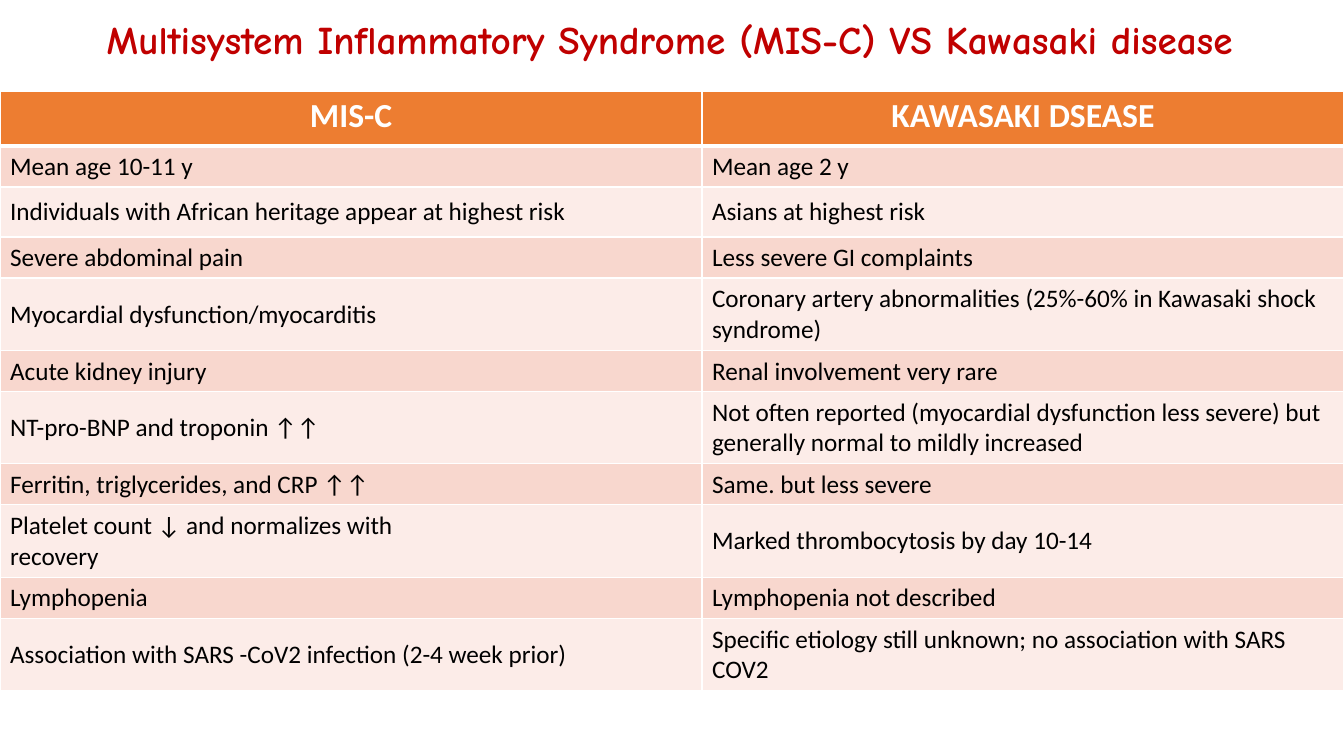
from dataclasses import dataclass

from lxml.etree import SubElement
from pptx import Presentation
from pptx.dml.color import RGBColor
from pptx.enum.text import MSO_ANCHOR as Anchor, PP_ALIGN as Align
from pptx.oxml.ns import qn
from pptx.util import Emu, Pt

PX = 914400 / 100.8


@dataclass(frozen=True)
class Theme:
    title_font: str = "Comic Neue"
    body_font: str = "Calibri"
    title_size: int = 28
    header_size: int = 24
    body_size: int = 18
    title: str = "C00000"
    header: str = "ED7D31"
    bands: tuple = ("F8D7CE", "FCECE8")
    white: str = "FFFFFF"
    black: str = "000000"


theme = Theme()


def px(length):
    return Emu(round(length * PX))


def write(frame, text, font=theme.body_font, size=theme.body_size,
          color=theme.black, bold=False, align=Align.LEFT):
    """Fill a text frame, one paragraph for each line of text."""
    frame.word_wrap = True
    frame.text = text
    for para in frame.paragraphs:
        para.alignment = align
        for span in para.runs:
            span.font.name = font
            span.font.size = Pt(size)
            span.font.bold = bold
            span.font.color.rgb = RGBColor.from_string(color)


HEADER_HEIGHT = 55
COLUMN_WIDTHS = (702, 642)
ROWS = [
    (HEADER_HEIGHT, "MIS-C", "KAWASAKI DSEASE"),
    (41, "Mean age 10-11 y", "Mean age 2 y"),
    (50, "Individuals with African heritage appear at highest risk",
     "Asians at highest risk"),
    (41, "Severe abdominal pain", "Less severe GI complaints"),
    (73, "Myocardial dysfunction/myocarditis",
     "Coronary artery abnormalities (25%-60% in Kawasaki shock syndrome)"),
    (41, "Acute kidney injury", "Renal involvement very rare"),
    (72, "NT-pro-BNP and troponin ↑↑",
     "Not often reported (myocardial dysfunction less severe) but "
     "generally normal to mildly increased"),
    (41, "Ferritin, triglycerides, and CRP ↑↑", "Same. but less severe"),
    (73, "Platelet count ↓ and normalizes with\nrecovery",
     "Marked thrombocytosis by day 10-14"),
    (41, "Lymphopenia", "Lymphopenia not described"),
    (72, "Association with SARS -CoV2 infection (2-4 week prior)",
     "Specific etiology still unknown; no association with SARS COV2"),
]

deck = Presentation()
deck.slide_width, deck.slide_height = px(1344), px(756)
page = deck.slides.add_slide(deck.slide_layouts[6])

title_box = page.shapes.add_textbox(px(-6), px(10), px(1351), px(57))
write(title_box.text_frame,
      "Multisystem Inflammatory Syndrome (MIS-C) VS Kawasaki disease",
      font=theme.title_font, size=theme.title_size, color=theme.title,
      bold=True, align=Align.CENTER)

table_height = sum(height for height, *_ in ROWS)
table = page.shapes.add_table(len(ROWS), len(COLUMN_WIDTHS), px(0), px(91),
                              px(sum(COLUMN_WIDTHS)), px(table_height)).table
for column, width in zip(table.columns, COLUMN_WIDTHS):
    column.width = px(width)

for row_index, (height, *texts) in enumerate(ROWS):
    table.rows[row_index].height = px(height)
    is_header = row_index == 0
    fill_color = theme.header if is_header else theme.bands[(row_index - 1) % 2]
    for column_index, text in enumerate(texts):
        cell = table.cell(row_index, column_index)
        if is_header:
            write(cell.text_frame, text, size=theme.header_size,
                  color=theme.white, bold=True, align=Align.CENTER)
        else:
            write(cell.text_frame, text)
            cell.vertical_anchor = Anchor.MIDDLE

        # Borders must stand before the fill in the cell properties.
        properties = cell._tc.get_or_add_tcPr()
        for side in ("L", "R", "T", "B"):
            thick = (is_header and side == "B") or (row_index == 1 and side == "T")
            border = SubElement(properties, qn(f"a:ln{side}"),
                                w=str(Pt(3 if thick else 1)))
            paint = SubElement(border, qn("a:solidFill"))
            SubElement(paint, qn("a:srgbClr"), val=theme.white)
        cell.fill.solid()
        cell.fill.fore_color.rgb = RGBColor.from_string(fill_color)

deck.save("out.pptx")
